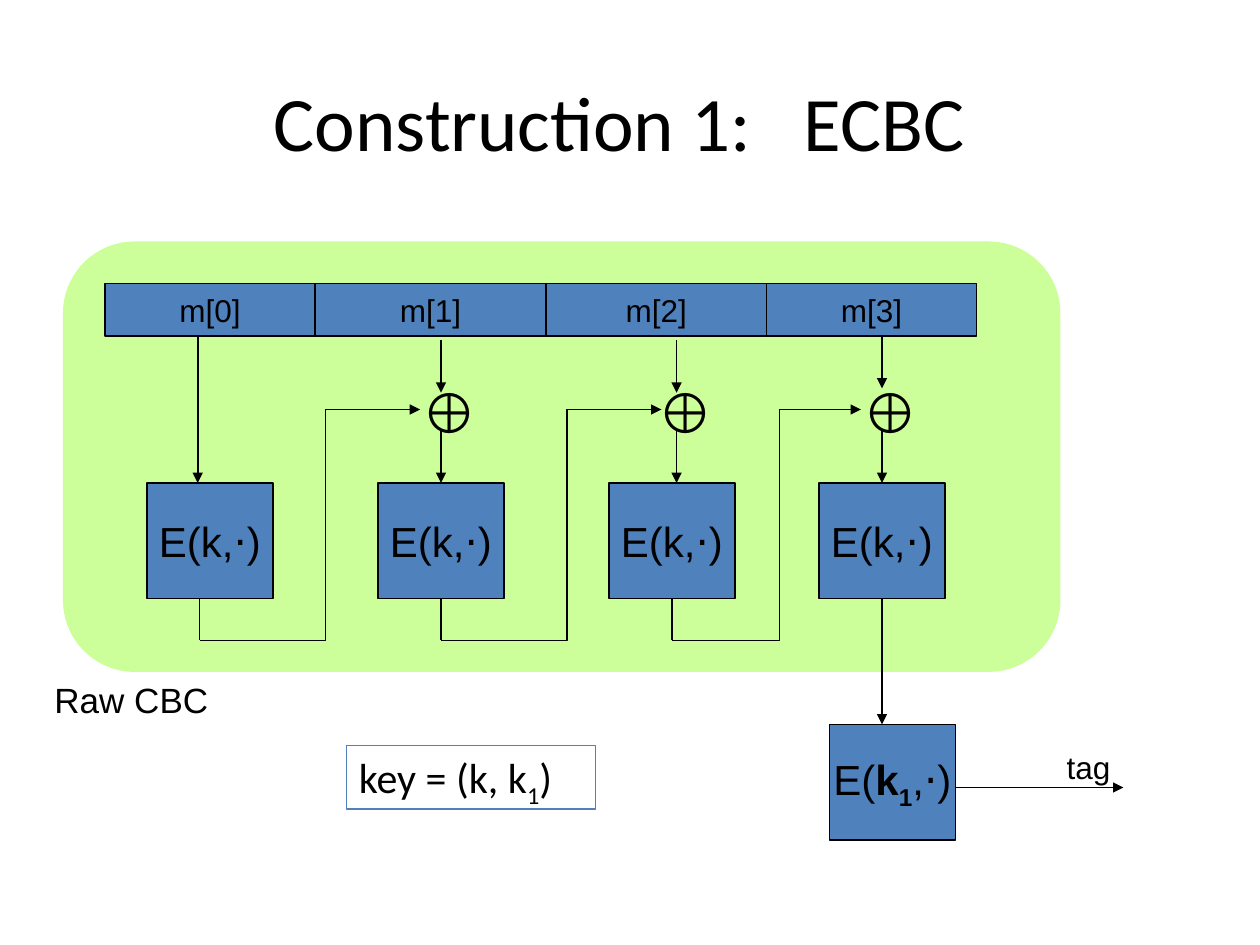
"""Build the slide on the ECBC construction: raw CBC followed by one more encryption."""
from lxml.etree import SubElement
from pptx import Presentation
from pptx.dml.color import RGBColor
from pptx.enum.shapes import MSO_CONNECTOR, MSO_SHAPE
from pptx.enum.text import MSO_ANCHOR, PP_ALIGN
from pptx.oxml.ns import qn
from pptx.util import Pt

BLACK = RGBColor(0x00, 0x00, 0x00)
BLUE = RGBColor(0x4F, 0x81, 0xBD)
GREEN = RGBColor(0xCC, 0xFF, 0x99)

TITLE = "Construction 1:   ECBC"
PLAIN, BOLD, SUB, BOLD_SUB = (False, False), (True, False), (False, True), (True, True)
CIPHER = [("E(k,⋅)", PLAIN)]
LAST_CIPHER = [("E(", PLAIN), ("k", BOLD), ("1", BOLD_SUB), (",⋅)", PLAIN)]
KEY = [("key = (k, k", PLAIN), ("1", SUB), (")", PLAIN)]
MESSAGE = [("m[0]", 120), ("m[1]", 132), ("m[2]", 126), ("m[3]", 120)]
CIPHER_LEFTS = [84, 216, 348, 468]
XORS = [
    {"x": 252, "left": 234, "top": 194.4, "tip": 224.4},
    {"x": 386.64, "left": 368.64, "top": 194.4, "tip": 224.4},
    {"x": 504, "left": 486, "top": 192, "tip": 222},
]
FEEDBACK = [(114, 186, 240), (252, 324, 378), (384, 445.5, 492)]

MESSAGE_LEFT, MESSAGE_TOP, MESSAGE_H = 60, 162, 30
CIPHER_TOP, CIPHER_W, CIPHER_H = 276, 72, 66
CIPHER_BOTTOM = CIPHER_TOP + CIPHER_H
XOR_TOP, XOR_BOTTOM = 212.4, 246
FEEDBACK_LOW, FEEDBACK_HIGH = 366, 234
LAST_LEFT, LAST_TOP, TAG_Y = 474, 414, 450


def add_runs(p, runs, size, font):
    for text, (bold, sub) in runs:
        r = p.add_run()
        r.text = text
        r.font.size, r.font.name, r.font.bold = Pt(size), font, bold
        r.font.color.rgb = BLACK
        if sub:
            r.font._element.set("baseline", "-25000")


def add_label(slide, box, runs, size, font="Arial"):
    s = slide.shapes.add_textbox(*map(Pt, box))
    s.text_frame.word_wrap = False
    add_runs(s.text_frame.paragraphs[0], runs, size, font)
    return s


def add_block(slide, box, runs, size):
    s = slide.shapes.add_shape(MSO_SHAPE.RECTANGLE, *map(Pt, box))
    s.shadow.inherit = False
    s.fill.solid()
    s.fill.fore_color.rgb = BLUE
    set_line(s)
    tf = s.text_frame
    tf.word_wrap, tf.vertical_anchor = False, MSO_ANCHOR.MIDDLE
    tf.paragraphs[0].alignment = PP_ALIGN.CENTER
    add_runs(tf.paragraphs[0], runs, size, "Arial")


def set_line(s, width=0.75, color=BLACK, arrow=False):
    s.line.color.rgb, s.line.width = color, Pt(width)
    if arrow:
        SubElement(s.line._get_or_add_ln(), qn("a:tailEnd"), type="triangle")


def add_line(slide, start, end, width=0.75, arrow=True):
    s = slide.shapes.add_connector(MSO_CONNECTOR.STRAIGHT, *map(Pt, start + end))
    set_line(s, width, arrow=arrow)
    SubElement(s._element.spPr, qn("a:effectLst"))


def add_feedback(slide, start, bend, end):
    add_line(slide, (start, CIPHER_BOTTOM), (start, FEEDBACK_LOW), arrow=False)
    points = [(bend, FEEDBACK_LOW), (bend, FEEDBACK_HIGH), (end, FEEDBACK_HIGH)]
    builder = slide.shapes.build_freeform(Pt(start), Pt(FEEDBACK_LOW))
    builder.add_line_segments([(Pt(x), Pt(y)) for x, y in points], close=False)
    s = builder.convert_to_shape()
    s.shadow.inherit = False
    s.fill.background()
    set_line(s, arrow=True)


def add_title(slide):
    s = slide.shapes.title
    s.left, s.top, s.width, s.height = map(Pt, (48, 24, 612, 90))
    s.text_frame.text = TITLE
    p = s.text_frame.paragraphs[0]
    p.alignment = PP_ALIGN.CENTER
    p.runs[0].font.size, p.runs[0].font.name = Pt(44), "Calibri"
    p.runs[0].font.color.rgb = BLACK


def add_raw_cbc(slide):
    s = slide.shapes.add_shape(MSO_SHAPE.ROUNDED_RECTANGLE, *map(Pt, (36, 138, 570, 246)))
    s.shadow.inherit = False
    s.fill.solid()
    s.fill.fore_color.rgb = GREEN
    s.line.fill.background()
    add_label(slide, (24, 384, 120, 36), [("Raw CBC", PLAIN)], 20)

    left = MESSAGE_LEFT
    for text, width in MESSAGE:
        add_block(slide, (left, MESSAGE_TOP, width, MESSAGE_H), [(text, PLAIN)], 18)
        left += width
    for left in CIPHER_LEFTS:
        add_block(slide, (left, CIPHER_TOP, CIPHER_W, CIPHER_H), CIPHER, 24)

    add_line(slide, (113, MESSAGE_TOP + MESSAGE_H), (113, CIPHER_TOP), width=1)
    for xor in XORS:
        add_label(slide, (xor["left"], XOR_TOP, 39.6, 46), [("⊕", PLAIN)], 32)
        add_line(slide, (xor["x"], xor["top"]), (xor["x"], xor["tip"]))
        add_line(slide, (xor["x"], XOR_BOTTOM), (xor["x"], CIPHER_TOP))
    for start, bend, end in FEEDBACK:
        add_feedback(slide, start, bend, end)


def add_last_step(slide):
    add_line(slide, (504, CIPHER_BOTTOM), (504, LAST_TOP))
    add_block(slide, (LAST_LEFT, LAST_TOP, CIPHER_W, CIPHER_H), LAST_CIPHER, 24)
    add_line(slide, (LAST_LEFT + CIPHER_W, TAG_Y), (642, TAG_Y))
    add_label(slide, (602.4, 423.6, 39.6, 29), [("tag", PLAIN)], 18)
    key = add_label(slide, (198, 426, 142.4, 36.4), KEY, 24, "Calibri")
    set_line(key, color=BLUE)


def main():
    prs = Presentation()
    prs.slide_width, prs.slide_height = Pt(720), Pt(540)
    slide = prs.slides.add_slide(prs.slide_layouts[5])
    add_title(slide)
    add_raw_cbc(slide)
    add_last_step(slide)
    prs.save("out.pptx")


if __name__ == "__main__":
    main()
